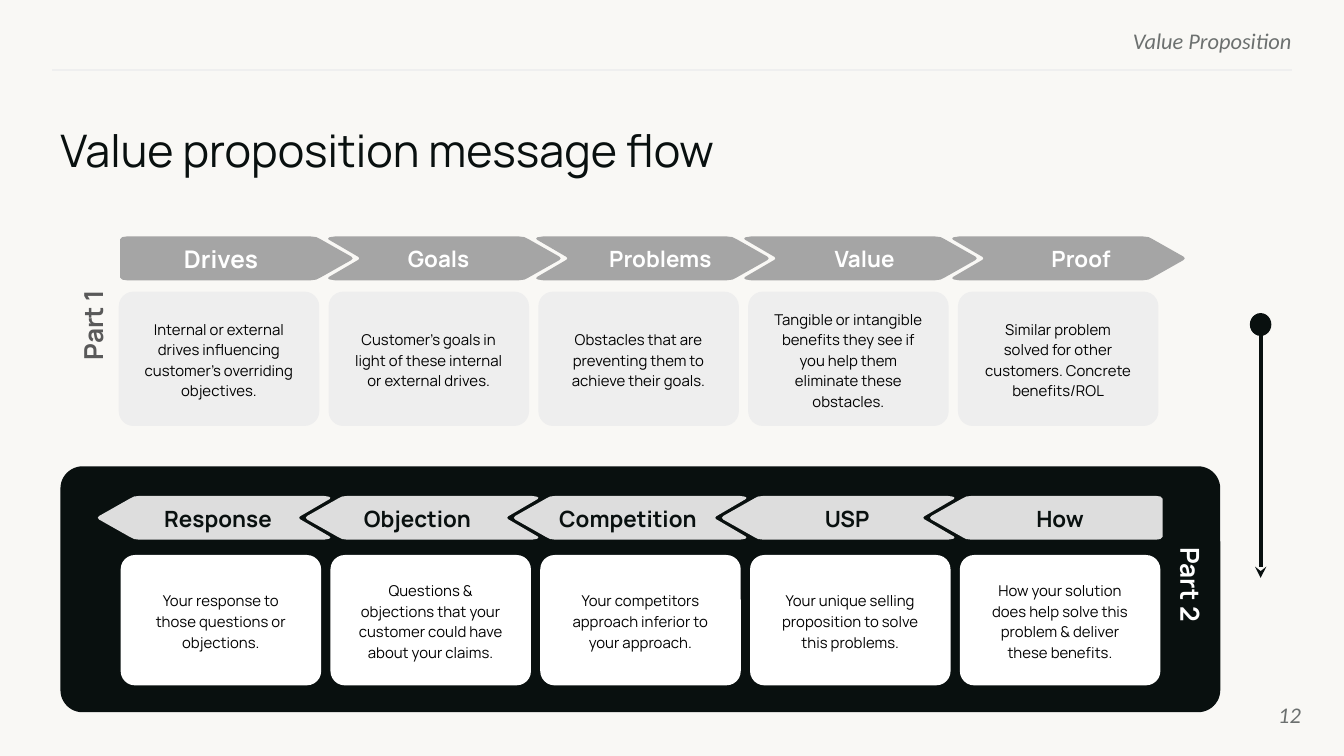
import pptx
import pptx.dml.color
import pptx.enum.shapes
import pptx.enum.text
import pptx.oxml
import pptx.oxml.ns
import pptx.util
from dataclasses import dataclass

COLUMNS, ROWS = 100, 56.25
SHAPES = pptx.enum.shapes.MSO_SHAPE
ALIGN = pptx.enum.text.PP_ALIGN
ANCHOR = pptx.enum.text.MSO_ANCHOR
INK, GREY, WHITE = "09100F", "6C706F", "FFFFFF"

deck = pptx.Presentation()
deck.slide_width = pptx.util.Inches(10)
deck.slide_height = pptx.util.Inches(5.625)


@dataclass
class Box:
    left: float
    top: float
    width: float
    height: float

    def inner(self, left, top, width, height):
        return Box(self.left + left, self.top + top, width, height)

    def emu(self):
        return (across(self.left), down(self.top), across(self.width), down(self.height))


PART_1 = dict(
    cards=["Internal or external drives influencing customer’s overriding objectives.",
           "Customer’s goals in light of these internal or external drives.",
           "Obstacles that are preventing them to\vachieve their goals.",
           "Tangible or intangible benefits they see if you help them eliminate these obstacles.",
           "Similar problem solved for other customers. Concrete benefits/ROL"],
    headings=[("Drives", 7.6, 13), ("Goals", 23.8, 12), ("Problems", 40.3, 12),
              ("Value", 55.5, 12), ("Proof", 71.6, 12)],
    arrow_fill="A5A5A5", card_fill="EEEEEE", heading_color=WHITE,
    arrows_left=0.1, card_top=4.1, card_height=10, leftward=False)
PART_2 = dict(
    cards=["Your response to those questions or objections.",
           "Questions & objections that your customer could have about your claims.",
           "Your competitors approach inferior to\vyour approach.",
           "Your unique selling proposition to solve\vthis problems.",
           "How your solution does help solve this problem & deliver these benefits."],
    headings=[("Response", 7.25, 12), ("Objection ", 22.25, 12), ("Competition", 37.75, 12),
              ("USP", 54.05, 12), ("How", 69.9, 12)],
    arrow_fill="DDDDDD", card_fill=WHITE, heading_color=INK,
    arrows_left=-1.7, card_top=4.4, card_height=9.7, leftward=True)

TIP = [(14.2, 0), (14.6, 0.05), (14.9, 0.2), (17.2, 1.5), (17.3, 1.63),
       (17.2, 1.76), (14.9, 3.06), (14.6, 3.21), (14.2, 3.26)]
NOTCH = [(0.5, 3.26), (0.1, 3.2), (0, 3.12), (0.05, 3.02), (2.25, 1.74),
         (2.32, 1.63), (2.25, 1.52), (0.05, 0.24), (0, 0.14), (0.1, 0.06), (0.5, 0)]
FLAT_END = [(0.5, 3.26), (0.15, 3.21), (0, 3.05), (0, 0.21), (0.15, 0.05), (0.5, 0)]
ARROW_WIDTH, ARROW_STEP = 17.3, 15.48
CARD_WIDTH, CARD_STEP = 14.92, 15.61


def across(columns):
    return round(deck.slide_width * columns / COLUMNS)


def down(rows):
    return round(deck.slide_height * rows / ROWS)


def rgb(value):
    return pptx.dml.color.RGBColor.from_string(value)


def paint(shape, color):
    shape.shadow.inherit = False
    shape.fill.solid()
    shape.fill.fore_color.rgb = rgb(color)
    shape.line.fill.background()


def write(shape, text, size, color, align=ALIGN.CENTER, anchor=ANCHOR.MIDDLE,
          font="Manrope", bold=False, italic=False, side=0, spacing=None):
    frame = shape.text_frame
    frame.text = text
    frame.word_wrap = True
    frame.auto_size = pptx.enum.text.MSO_AUTO_SIZE.NONE
    frame.vertical_anchor = anchor
    frame.margin_left = frame.margin_right = across(side)
    frame.margin_top = frame.margin_bottom = 0
    paragraph = frame.paragraphs[0]
    paragraph.alignment = align
    paragraph.line_spacing = spacing
    for run in paragraph.runs:
        run.font.name = font
        run.font.size = pptx.util.Pt(size)
        run.font.bold = bold
        run.font.italic = italic
        run.font.color.rgb = rgb(color)


def label(slide, box, text, size, color, **style):
    caption = slide.shapes.add_textbox(*box.emu())
    write(caption, text, size, color, **style)
    return caption


def rounded(slide, box, color, corner):
    panel = slide.shapes.add_shape(SHAPES.ROUNDED_RECTANGLE, *box.emu())
    panel.adjustments[0] = corner
    paint(panel, color)
    return panel


def rule(slide, start, end, color, weight):
    stroke = slide.shapes.add_connector(
        pptx.enum.shapes.MSO_CONNECTOR.STRAIGHT,
        across(start[0]), down(start[1]), across(end[0]), down(end[1]))
    stroke.line.color.rgb = rgb(color)
    stroke.line.width = pptx.util.Pt(weight)
    stroke._element.spPr.append(pptx.oxml.parse_xml(
        "<a:effectLst %s/>" % pptx.oxml.ns.nsdecls("a")))
    return stroke


def arrow_band(slide, box, color, leftward, flat):
    outline = TIP + (FLAT_END if flat else NOTCH)
    points = [(across(box.left + (box.width - x if leftward else x)), down(box.top + y))
              for x, y in outline]
    builder = slide.shapes.build_freeform(*points[0])
    builder.add_line_segments(points[1:], close=True)
    paint(builder.convert_to_shape(), color)


def message_row(slide, box, cards, headings, arrow_fill, card_fill, heading_color,
                arrows_left, card_top, card_height, leftward):
    flat_index = len(cards) - 1 if leftward else 0
    for index in range(len(cards)):
        band = box.inner(arrows_left + index * ARROW_STEP, 0, ARROW_WIDTH, 3.26)
        arrow_band(slide, band, arrow_fill, leftward, index == flat_index)
    for heading, center, size in headings:
        label(slide, box.inner(center - 6.5, 1.2, 13, 0.9), heading, size,
              heading_color, bold=True)
    for index, message in enumerate(cards):
        card = rounded(slide, box.inner(index * CARD_STEP, card_top, CARD_WIDTH, card_height),
                       card_fill, 0.11)
        write(card, message, 8, "000000", side=1.6, spacing=1.15)


def header(slide, box):
    label(slide, box.inner(53.7, 0, 38.5, 1.8), "Value Proposition", 12, GREY,
          align=ALIGN.RIGHT, anchor=ANCHOR.TOP, font="Calibri", italic=True)
    rule(slide, (box.left + box.width, box.top + 3.2), (box.left, box.top + 3.2), "EFEFEF", 0.75)
    title = slide.shapes.title
    title.left, title.top, title.width, title.height = box.inner(0.6, 7.1, 92.3, 5.1).emu()
    write(title, "Value proposition message flow", 24, INK,
          align=ALIGN.LEFT, anchor=ANCHOR.TOP)
    title.text_frame.paragraphs[0].space_after = pptx.util.Pt(10)


def part_name(slide, box, text, color, rotation):
    label(slide, box, text, 14, color, bold=True).rotation = rotation


def direction(slide, box):
    middle = box.left + box.width / 2
    arrow = rule(slide, (middle, box.top + 0.85), (middle, box.top + box.height), INK, 2)
    arrow.line._get_or_add_ln().append(pptx.oxml.parse_xml(
        '<a:tailEnd type="stealth" %s/>' % pptx.oxml.ns.nsdecls("a")))
    origin = slide.shapes.add_shape(SHAPES.OVAL, *box.inner(0, 0, box.width, 1.7).emu())
    paint(origin, INK)


def build():
    slide = deck.slides.add_slide(deck.slide_layouts[5])
    slide.background.fill.solid()
    slide.background.fill.fore_color.rgb = rgb("F9F8F5")
    header(slide, Box(3.9, 2, 92.2, 12.2))
    label(slide, Box(90.8, 51, 6, 4.3), "12", 12, GREY,
          align=ALIGN.RIGHT, font="Calibri", italic=True)
    rounded(slide, Box(4.5, 34.7, 86.3, 18.3), INK, 0.09)
    message_row(slide, Box(8.84, 17.6, 77.4, 14.1), **PART_1)
    message_row(slide, Box(8.98, 36.9, 77.4, 14.1), **PART_2)
    part_name(slide, Box(0.7, 23, 12.4, 2.4), "Part 1", "595959", 270)
    part_name(slide, Box(82.4, 42.3, 12.4, 2.4), "Part 2", WHITE, 90)
    direction(slide, Box(93, 23.3, 1.6, 19.7))
    deck.save("out.pptx")


if __name__ == "__main__":
    build()
